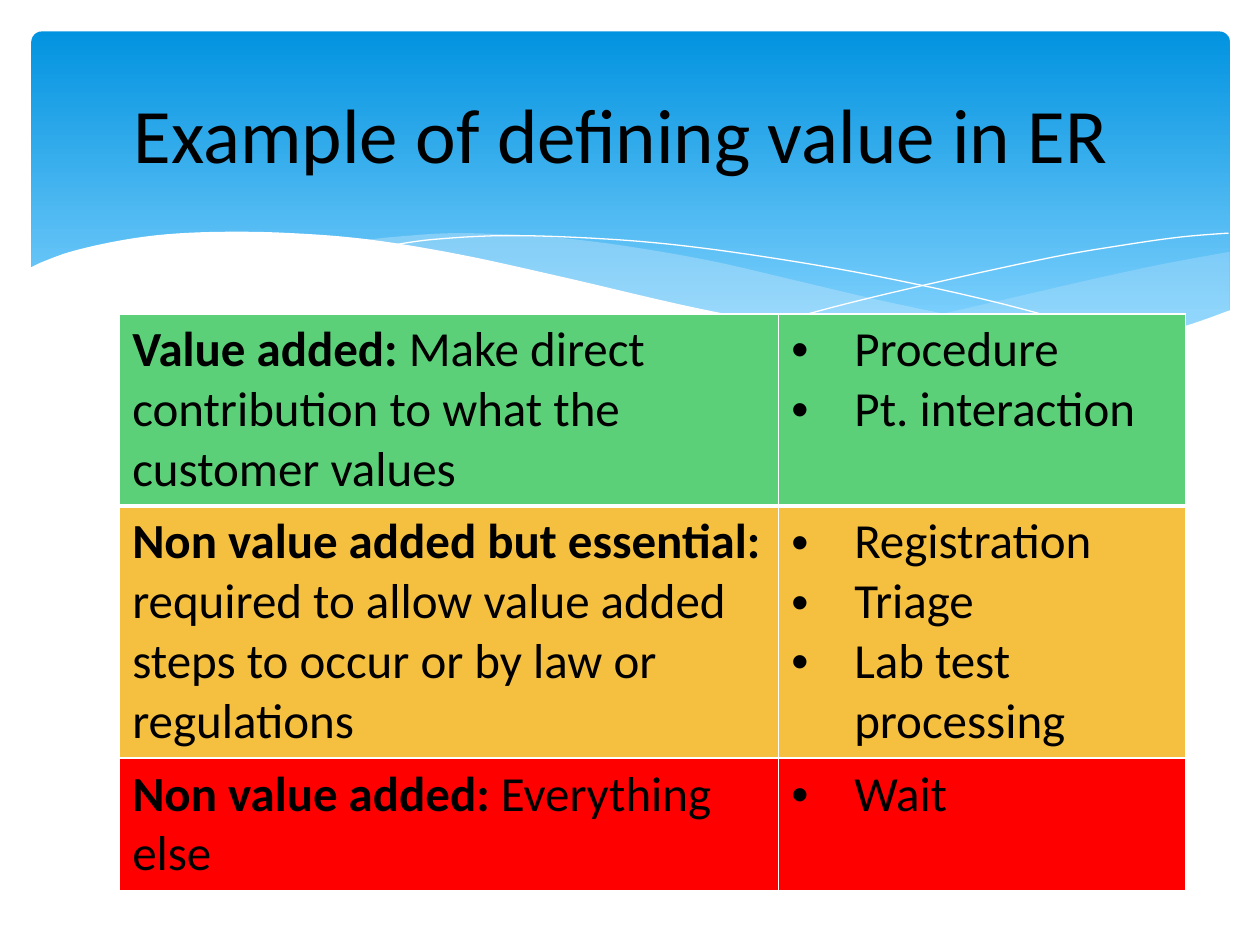
import dataclasses
import typing

import pptx
import pptx.dml.color
import pptx.enum.shapes
import pptx.enum.text
import pptx.oxml
import pptx.oxml.ns
import pptx.oxml.xmlchemy
import pptx.util

RGBColor = pptx.dml.color.RGBColor
BLACK = RGBColor(0x00, 0x00, 0x00)
WHITE = RGBColor(0xFF, 0xFF, 0xFF)
DEEP_BLUE = RGBColor(0x02, 0x93, 0xE0)
LIGHT_BLUE = RGBColor(0x83, 0xD3, 0xFE)
PALE_BLUE = RGBColor(0xC6, 0xE7, 0xFC)
GREEN = RGBColor(0x5B, 0xD0, 0x78)
AMBER = RGBColor(0xF5, 0xC0, 0x40)
RED = RGBColor(0xFF, 0x00, 0x00)

FONT = "Calibri"
# The slide is a grid of square cells, a tenth of an inch each
COLUMNS, ROWS = 100, 75
CURVE_STEPS = 6

Point = tuple[float, float]
Curve = tuple[Point, ...]


def grid(cells: float) -> pptx.util.Emu:
    return pptx.util.Inches(cells / 10)


@dataclasses.dataclass(frozen=True)
class Wave:
    """Smooth curves joined by straight lines; opacity None means line only."""
    curves: tuple[Curve, ...]
    color: RGBColor
    opacity: typing.Optional[int] = None


@dataclasses.dataclass(frozen=True)
class ValueRow:
    heading: str
    definition: str
    examples: tuple[str, ...]
    color: RGBColor
    height: float
    top_border: float
    bottom_border: float


WAVES = (
    Wave((((97.5, 20), (92.1, 21), (86.1, 22.3), (77.9, 24.2), (72.9, 25.3), (66.1, 26.5)),
          ((66.1, 26.5), (71.9, 27.2), (76.9, 27.7), (81.4, 27.8), (86.3, 27.5),
           (91.3, 26.7), (94.9, 25.7), (97.6, 24.7)),
          ((97.6, 20),)), PALE_BLUE, 29),
    Wave((((89.3, 27.3), (83.7, 26.5), (77.5, 25.4), (70.6, 24), (62.9, 22.2), (56.9, 20.8),
           (51.4, 19.8), (46.5, 19.1), (42, 18.7), (36.1, 18.5), (31.3, 18.8), (28.6, 19.1)),
          ((28.6, 19.1), (34.2, 19.9), (40.4, 21.1), (49.1, 23.2), (56.6, 24.8), (63.4, 26.1),
           (69.5, 27), (74.8, 27.6), (79.6, 27.8), (84.8, 27.7), (89.3, 27.3))), PALE_BLUE, 40),
    Wave((((30.9, 19.5), (34.4, 19), (40.1, 18.7), (46.9, 18.9), (53.3, 19.4), (60.8, 20.4),
           (69.5, 21.9), (79.5, 24.1), (90.7, 27.2)),), WHITE),
    Wave((((61.3, 25.7), (67.2, 24.1), (74.8, 22.3), (83.6, 20.4), (89.5, 19.4),
           (93.8, 18.8), (97.5, 18.5)),), WHITE),
    Wave((((97.7, 24.6), (94, 25.9), (89.9, 26.9), (85, 27.5), (79.3, 27.6), (72.6, 27.2),
           (64.8, 26.2), (55.5, 24.5), (44.7, 22), (36.5, 20.2), (29.2, 19), (23, 18.5),
           (17.7, 18.4), (13.2, 18.6), (9.5, 19.1), (5.9, 19.9), (3.6, 20.7), (2.3, 21.3)),
          ((2.3, 32.9),), ((97.7, 32.9),)), WHITE, 100),
)

VALUE_ROWS = (
    ValueRow("Value added: ", "Make direct contribution to what the customer values",
             ("Procedure", "Pt. interaction"), GREEN, 15, 1, 3),
    ValueRow("Non value added but essential: ",
             "required to allow value added steps to occur or by law or regulations",
             ("Registration", "Triage", "Lab test processing"), AMBER, 19.9, 3, 1),
    ValueRow("Non value added: ", "Everything else", ("Wait",), RED, 10.4, 1, 1),
)


def smooth(curve: Curve) -> list[Point]:
    """Catmull-Rom spline through the points of the curve."""
    padded = (curve[0], *curve, curve[-1])
    points = [curve[0]]
    for a, b, c, d in zip(padded, padded[1:], padded[2:], padded[3:]):
        for step in range(1, CURVE_STEPS + 1):
            t = step / CURVE_STEPS
            points.append(tuple(
                (2 * q + (r - p) * t + (2 * p - 5 * q + 4 * r - s) * t ** 2
                 + (3 * q - p - 3 * r + s) * t ** 3) / 2
                for p, q, r, s in zip(a, b, c, d)))
    return points


def draw_wave(page, wave: Wave) -> None:
    points = [(grid(x), grid(y)) for curve in wave.curves for x, y in smooth(curve)]
    filled = wave.opacity is not None
    builder = page.shapes.build_freeform(*points[0], scale=1.0)
    builder.add_line_segments(points[1:], close=filled)
    shape = builder.convert_to_shape()
    shape.shadow.inherit = False
    if not filled:
        shape.fill.background()
        shape.line.color.rgb = wave.color
        shape.line.width = pptx.util.Pt(0)
        return
    shape.line.fill.background()
    shape.fill.solid()
    shape.fill.fore_color.rgb = wave.color
    if wave.opacity < 100:
        color = shape.fill._xPr.find(".//" + pptx.oxml.ns.qn("a:srgbClr"))
        color.append(pptx.oxml.parse_xml(
            f'<a:alpha {pptx.oxml.ns.nsdecls("a")} val="{wave.opacity * 1000}"/>'))


def draw_banner(page) -> None:
    banner = page.shapes.add_shape(
        pptx.enum.shapes.MSO_SHAPE.ROUNDED_RECTANGLE,
        grid(2.5), grid(2.5), grid(95.1), grid(27))
    banner.adjustments[0] = 0.03
    banner.shadow.inherit = False
    banner.line.fill.background()
    banner.fill.gradient()
    banner.fill.gradient_angle = 270
    for stop, color, position in zip(
            banner.fill.gradient_stops, (DEEP_BLUE, LIGHT_BLUE), (0, 0.9)):
        stop.color.rgb = color
        stop.position = position


def add_run(para, text: str, size: float, bold: bool = False) -> None:
    run = para.add_run()
    run.text = text
    run.font.name = FONT
    run.font.size = pptx.util.Pt(size)
    run.font.bold = bold
    run.font.color.rgb = BLACK


def add_bullet(para) -> None:
    properties = para._p.get_or_add_pPr()
    indent = grid(5)
    properties.set("marL", str(indent))
    properties.set("indent", str(-indent))
    namespace = pptx.oxml.ns.nsdecls("a")
    properties.append(pptx.oxml.parse_xml(f'<a:buFont {namespace} typeface="Arial"/>'))
    properties.append(pptx.oxml.parse_xml(f'<a:buChar {namespace} char="•"/>'))


def style_cell(cell, row: ValueRow) -> None:
    cell.fill.solid()
    cell.fill.fore_color.rgb = row.color
    borders = (("lnL", 1), ("lnR", 1), ("lnT", row.top_border), ("lnB", row.bottom_border))
    for index, (side, points) in enumerate(borders):
        cell._tc.get_or_add_tcPr().insert(index, pptx.oxml.parse_xml(
            f'<a:{side} {pptx.oxml.ns.nsdecls("a")} w="{pptx.util.Pt(points)}">'
            f'<a:solidFill><a:srgbClr val="{WHITE}"/></a:solidFill></a:{side}>'))


def draw_table(page, rows: tuple[ValueRow, ...]) -> None:
    widths = (52.3, 32.3)
    table = page.shapes.add_table(
        len(rows), len(widths), grid(9.5), grid(24.9), grid(sum(widths)),
        grid(sum(row.height for row in rows))).table
    for column, width in zip(table.columns, widths):
        column.width = grid(width)
    for index, row in enumerate(rows):
        table.rows[index].height = grid(row.height)
        meaning, examples = table.cell(index, 0), table.cell(index, 1)
        para = meaning.text_frame.paragraphs[0]
        add_run(para, row.heading, 28, bold=True)
        add_run(para, row.definition, 28)
        for number, example in enumerate(row.examples):
            frame = examples.text_frame
            para = frame.add_paragraph() if number else frame.paragraphs[0]
            add_bullet(para)
            add_run(para, example, 28)
        for cell in (meaning, examples):
            style_cell(cell, row)


def draw_title(page, text: str) -> None:
    box = page.shapes.add_textbox(grid(5), grid(3.7), grid(90), grid(13.7))
    box.text_frame.word_wrap = True
    box.text_frame.vertical_anchor = pptx.enum.text.MSO_ANCHOR.MIDDLE
    para = box.text_frame.paragraphs[0]
    para.alignment = pptx.enum.text.PP_ALIGN.CENTER
    add_run(para, text, 44)


def main() -> None:
    deck = pptx.Presentation()
    deck.slide_width, deck.slide_height = grid(COLUMNS), grid(ROWS)
    page = deck.slides.add_slide(deck.slide_layouts[6])
    # Blue banner with its waves
    draw_banner(page)
    for wave in WAVES:
        draw_wave(page, wave)
    # Content
    draw_table(page, VALUE_ROWS)
    draw_title(page, "Example of defining value in ER ")
    deck.save("out.pptx")


if __name__ == "__main__":
    main()
